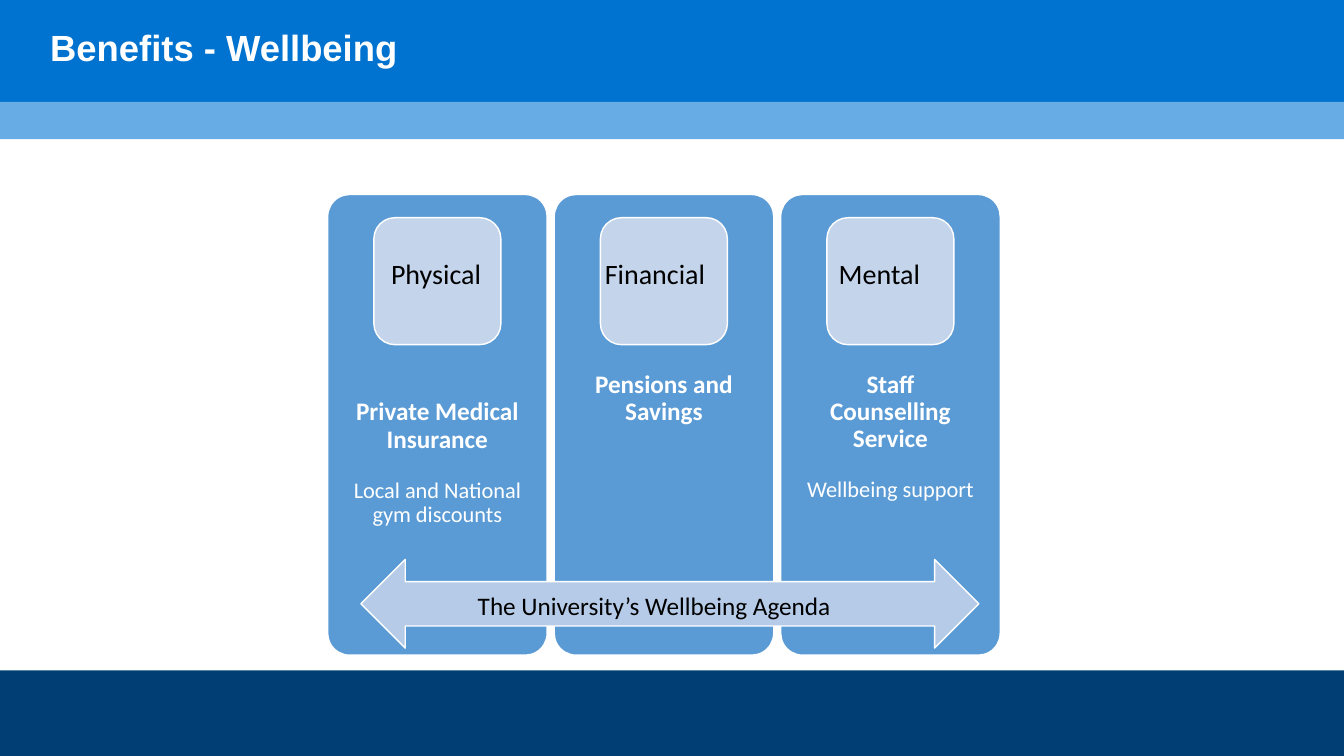
import pptx
import pptx.util
import pptx.dml.color
import pptx.enum.shapes
import pptx.enum.text
import pptx.oxml

Inches = pptx.util.Inches
Pt = pptx.util.Pt
Kind = pptx.enum.shapes.MSO_SHAPE
Align = pptx.enum.text.PP_ALIGN
Anchor = pptx.enum.text.MSO_ANCHOR

WIDE, HIGH = 13.33, 7.5
CARDS = [
    ("Private Medical Insurance", "Local and National gym discounts", Anchor.MIDDLE),
    ("Pensions and Savings", None, Anchor.TOP),
    ("Staff Counselling Service", "Wellbeing support", Anchor.TOP),
]


def color(code):
    return pptx.dml.color.RGBColor.from_string(code)


def shape(slide, kind, box, fill, line=None):
    item = slide.shapes.add_shape(kind, *map(Inches, box))
    item.shadow.inherit = False
    item.fill.solid()
    item.fill.fore_color.rgb = color(fill)
    if line:
        item.line.color.rgb = color(line)
        item.line.width = Pt(1)
    else:
        item.line.fill.background()
    return item


def style(para, size, code, bold=False, face="Calibri"):
    para.font.name = face
    para.font.size = Pt(size)
    para.font.bold = bold
    para.font.color.rgb = color(code)


def label(slide, box, text, wrap=True):
    item = slide.shapes.add_textbox(*map(Inches, box))
    item.text_frame.word_wrap = wrap
    para = item.text_frame.paragraphs[0]
    para.text = text
    return para


def header(slide, box):
    left, top, width, height = box
    # Title band with a lighter strip below
    shape(slide, Kind.RECTANGLE, (left, top, width, 1.01), "0072CF")
    shape(slide, Kind.RECTANGLE, (left, top + 1.01, width, height - 1.01), "68ACE5")
    title = label(slide, (left + 0.4, top + 0.25, 12.37, 0.62), "Benefits - Wellbeing")
    title.line_spacing = 0.9
    style(title, 26, "FFFFFF", True, "Arial")


def footer(slide, box):
    shape(slide, Kind.RECTANGLE, box, "003E74")


def card(slide, box, lead, more, anchor):
    left, top, width, height = box
    panel = shape(slide, Kind.ROUNDED_RECTANGLE, box, "5B9BD5", "FFFFFF")
    panel.adjustments[0] = 0.1
    # Text sits between the badge and the arrow
    frame = panel.text_frame
    frame.word_wrap = True
    frame.vertical_anchor = anchor
    frame.margin_left = frame.margin_right = Inches(0.17)
    frame.margin_top, frame.margin_bottom = Inches(1.69), Inches(0.93)
    paras = [frame.paragraphs[0]]
    paras[0].text = lead
    style(paras[0], 18, "FFFFFF", True)
    if more:
        paras[0].space_after = Pt(18)
        paras.append(frame.add_paragraph())
        paras[1].text = more
        style(paras[1], 16, "FFFFFF")
    for para in paras:
        para.alignment = Align.CENTER
        para.line_spacing = 0.9
    # Badge
    side = 1.26
    spot = (left + (width - side) / 2, top + 0.23, side, side)
    shape(slide, Kind.ROUNDED_RECTANGLE, spot, "C4D5EB", "FFFFFF")


def pillars(slide, box):
    left, top, width, height = box
    gap = 0.07
    each = (width - gap * (len(CARDS) - 1)) / len(CARDS)
    for i, (lead, more, anchor) in enumerate(CARDS):
        card(slide, (left + i * (each + gap), top, each, height), lead, more, anchor)

    # Arrow across all pillars
    shape(slide, Kind.LEFT_RIGHT_ARROW, (left + 0.33, top + 3.62, 6.13, 0.88),
          "B5CBE7", "FFFFFF")

    # Badge names, set out with tab stops
    names = label(slide, (left + 0.53, top + 0.57, 5.71, 0.44),
                  "Physical\tFinancial\tMental")
    style(names, 20, "000000")
    props = names._p.get_or_add_pPr()
    tabs = pptx.oxml.parse_xml(
        '<a:tabLst xmlns:a="http://schemas.openxmlformats.org/drawingml/2006/main">'
        + "".join(f'<a:tab pos="{Inches(stop)}" algn="l"/>' for stop in (2.12, 4.44))
        + "</a:tabLst>")
    props.insert(0, tabs)

    # Arrow caption
    agenda = label(slide, (left + 1.39, top + 3.88, 3.74, 0.4),
                   "The University’s Wellbeing Agenda", False)
    style(agenda, 18, "000000")


def main():
    deck = pptx.Presentation()
    deck.slide_width, deck.slide_height = Inches(WIDE), Inches(HIGH)
    slide = deck.slides.add_slide(deck.slide_layouts[6])
    header(slide, (0, 0, WIDE, 1.38))
    footer(slide, (0, 6.65, WIDE, 0.85))
    pillars(slide, (3.25, 1.93, 6.67, 4.57))
    deck.save("out.pptx")


if __name__ == "__main__":
    main()
